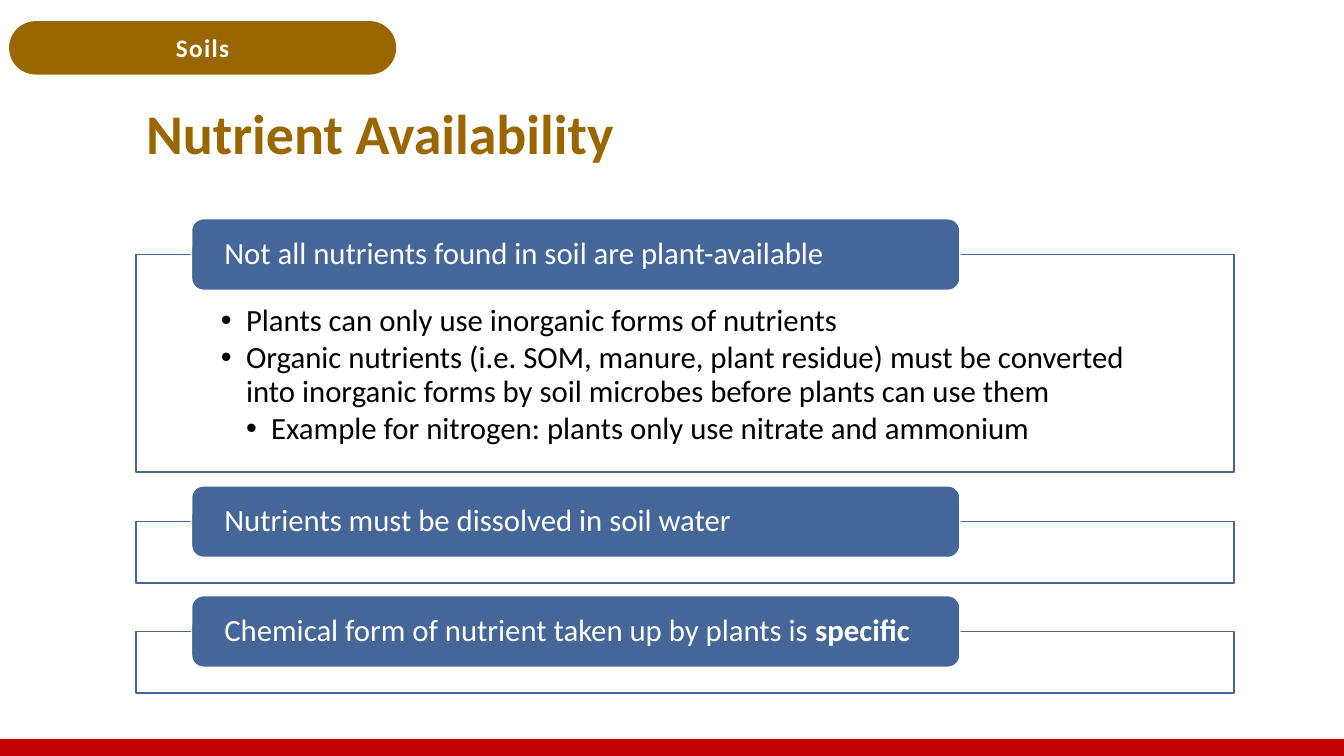
"""Build the Nutrient Availability slide."""
from dataclasses import dataclass

from lxml.etree import SubElement
from pptx import Presentation
from pptx.dml.color import RGBColor
from pptx.enum.shapes import MSO_SHAPE
from pptx.enum.text import MSO_ANCHOR, PP_ALIGN
from pptx.oxml.ns import qn
from pptx.util import Inches, Pt

BROWN, BLUE, RED = "996600", "446699", "C00000"
WHITE, BLACK = "FFFFFF", "000000"
FRAME_LEFT, FRAME_WIDTH = 1.35, 10.89
LABEL_HEIGHT = 0.71


@dataclass(frozen=True)
class Bullet:
    text: str
    level: int = 1


@dataclass(frozen=True)
class Section:
    top: float
    frame_height: float
    label: str
    emphasis: str = ""
    bullets: tuple[Bullet, ...] = ()


SECTIONS = (
    Section(2.17, 2.16, "Not all nutrients found in soil are plant-available", bullets=(
        Bullet("Plants can only use inorganic forms of nutrients"),
        Bullet("Organic nutrients (i.e. SOM, manure, plant residue) must be converted "
               "into inorganic forms by soil microbes before plants can use them"),
        Bullet("Example for nitrogen: plants only use nitrate and ammonium", 2),
    )),
    Section(4.82, 0.61, "Nutrients must be dissolved in soil water"),
    Section(5.91, 0.61, "Chemical form of nutrient taken up by plants is ", "specific"),
)


def rgb(color: str) -> RGBColor:
    return RGBColor.from_string(color)


def add_box(s, kind, left: float, top: float, width: float, height: float,
            fill: str, line: str | None = None):
    sp = s.shapes.add_shape(kind, Inches(left), Inches(top), Inches(width), Inches(height))
    sp.shadow.inherit = False
    sp.fill.solid()
    sp.fill.fore_color.rgb = rgb(fill)
    if line:
        sp.line.color.rgb = rgb(line)
        sp.line.width = Pt(1)
    else:
        sp.line.fill.background()
    return sp


def set_insets(tf, left: float, top: float, right: float, bottom: float) -> None:
    tf.word_wrap = True
    tf.margin_left, tf.margin_top = Inches(left), Inches(top)
    tf.margin_right, tf.margin_bottom = Inches(right), Inches(bottom)


def style(p, size: float, color: str, bold: bool = False,
          align=PP_ALIGN.LEFT, spacing: float = 0.9) -> None:
    p.alignment = align
    p.line_spacing = spacing
    for r in p.runs:
        r.font.name = "Calibri"
        r.font.size = Pt(size)
        r.font.color.rgb = rgb(color)
        r.font.bold = bold


def add_bullet(p, bullet: Bullet) -> None:
    p.text = bullet.text
    p.level = bullet.level
    pPr = p._p.get_or_add_pPr()
    pPr.set("marL", str(Inches(0.25 * bullet.level)))
    pPr.set("indent", str(Inches(-0.25)))
    p.space_after = Pt(3)
    style(p, 22, BLACK)
    SubElement(pPr, qn("a:buFont"), typeface="Arial")
    SubElement(pPr, qn("a:buChar"), char="•")


def add_section(s, section: Section) -> None:
    frame = add_box(s, MSO_SHAPE.RECTANGLE, FRAME_LEFT, section.top + LABEL_HEIGHT / 2,
                    FRAME_WIDTH, section.frame_height, WHITE, BLUE)
    fill_color = frame._element.spPr.find(qn("a:solidFill"))[0]
    SubElement(fill_color, qn("a:alpha"), val="90000")
    if section.bullets:
        tf = frame.text_frame
        tf.vertical_anchor = MSO_ANCHOR.TOP
        set_insets(tf, 0.84, 0.5, 0.84, 0.17)
        for i, bullet in enumerate(section.bullets):
            add_bullet(tf.add_paragraph() if i else tf.paragraphs[0], bullet)

    label = add_box(s, MSO_SHAPE.ROUNDED_RECTANGLE, 1.9, section.top, 7.62,
                    LABEL_HEIGHT, BLUE, WHITE)
    tf = label.text_frame
    tf.vertical_anchor = MSO_ANCHOR.MIDDLE
    set_insets(tf, 0.29, 0, 0.29, 0)
    p = tf.paragraphs[0]
    p.text = section.label
    if section.emphasis:
        p.add_run().text = section.emphasis
    style(p, 22, WHITE)
    if section.emphasis:
        p.runs[-1].font.bold = True


def add_header(s) -> None:
    add_box(s, MSO_SHAPE.RECTANGLE, 0, 7.33, 13.33, 0.17, RED)
    tab = add_box(s, MSO_SHAPE.ROUNDED_RECTANGLE, 0.09, 0.21, 3.84, 0.53, BROWN)
    tab.adjustments[0] = 0.5
    tab.text_frame.text = "Soils"
    tab.text_frame.vertical_anchor = MSO_ANCHOR.MIDDLE
    p = tab.text_frame.paragraphs[0]
    style(p, 18, WHITE, True, PP_ALIGN.CENTER, 1.0)
    p.runs[0].font._element.set("spc", "100")

    title = s.shapes.add_textbox(Inches(FRAME_LEFT), Inches(0.85),
                                 Inches(FRAME_WIDTH), Inches(1))
    tf = title.text_frame
    tf.text = "Nutrient Availability"
    tf.word_wrap = True
    tf.vertical_anchor = MSO_ANCHOR.MIDDLE
    style(tf.paragraphs[0], 40, BROWN, True)


def main() -> None:
    prs = Presentation()
    prs.slide_width, prs.slide_height = Inches(13.33), Inches(7.5)
    s = prs.slides.add_slide(prs.slide_layouts[6])
    add_header(s)
    for section in SECTIONS:
        add_section(s, section)
    prs.save("out.pptx")


if __name__ == "__main__":
    main()
